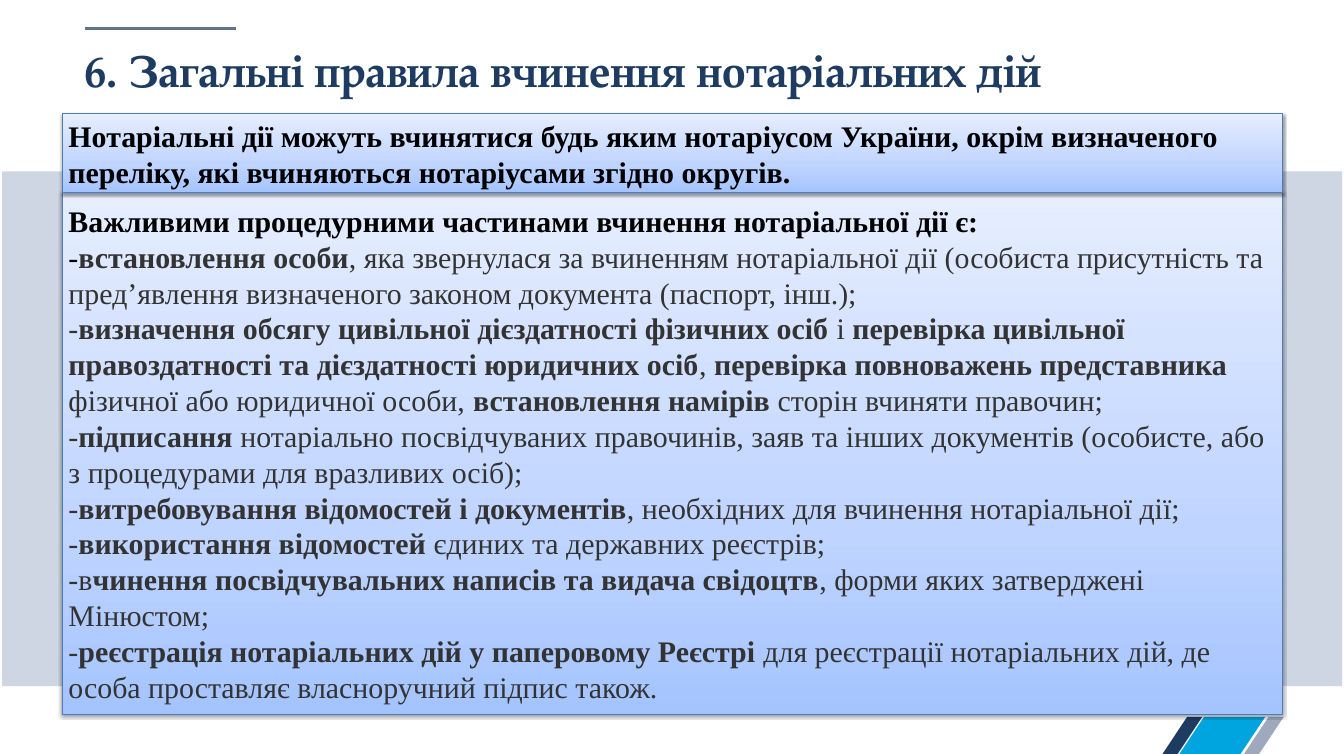
from copy import deepcopy

from lxml import etree
from pptx import Presentation
from pptx.dml.color import RGBColor
from pptx.enum import shapes, text
from pptx.oxml.ns import qn
from pptx.util import Cm, Pt

BLACK = RGBColor(0x00, 0x00, 0x00)
DARK_GREY = RGBColor(0x33, 0x33, 0x33)
NAVY = RGBColor(0x1E, 0x3C, 0x61)
SKY = RGBColor(0x00, 0xA4, 0xDF)
GREY_BLUE = RGBColor(0x9E, 0xA9, 0xBE)
SLATE = RGBColor(0x5F, 0x74, 0x88)
PALE = RGBColor(0xCE, 0xD6, 0xE3)
BORDER = RGBColor(0x4B, 0x7E, 0xBC)
GRADIENT = [
    (0, RGBColor(0xA4, 0xC4, 0xFF)),
    (0.35, RGBColor(0xBF, 0xD4, 0xFF)),
    (1, RGBColor(0xE6, 0xEE, 0xFF)),
]

TITLE = "6. Загальні правила вчинення нотаріальних дій"
RULE = (
    "**Нотаріальні дії можуть вчинятися будь яким нотаріусом України, окрім "
    "визначеного переліку, які вчиняються нотаріусами згідно округів.**"
)
HEADING = "**Важливими процедурними частинами вчинення нотаріальної дії є:**"
STEPS = [
    "-**встановлення особи**, яка звернулася за вчиненням нотаріальної дії (особиста "
    "присутність та пред’явлення визначеного законом документа (паспорт, інш.);",
    "-**визначення обсягу цивільної дієздатності фізичних осіб **і **перевірка цивільної "
    "правоздатності та дієздатності юридичних осіб**, **перевірка повноважень "
    "представника **фізичної або юридичної особи, **встановлення намірів **сторін "
    "вчиняти правочин;",
    "-**підписання **нотаріально посвідчуваних правочинів, заяв та інших документів "
    "(особисте, або з процедурами для вразливих осіб);",
    "-**витребовування відомостей і документів**, необхідних для вчинення нотаріальної дії;",
    "-**використання відомостей **єдиних та державних реєстрів;",
    "-в**чинення посвідчувальних написів та видача свідоцтв**, форми яких затверджені "
    "Мінюстом;",
    "-**реєстрація нотаріальних дій у паперовому Реєстрі **для реєстрації нотаріальних "
    "дій, де особа проставляє власноручний підпис також.",
]


def write_text(paragraph, content, *, font, size, color, lead_color=None, spacing=None):
    """Fill a paragraph; ** toggles bold, lead_color colours the first run."""
    paragraph.alignment = text.PP_ALIGN.LEFT
    if spacing:
        paragraph.line_spacing = Pt(spacing)
    for index, part in enumerate(content.split("**")):
        if not part:
            continue
        run = paragraph.add_run()
        run.text = part
        run.font.name = font
        run.font.size = Pt(size)
        run.font.bold = index % 2 == 1
        run.font.color.rgb = lead_color if lead_color and index == 0 else color


def paint(shape, color):
    shape.shadow.inherit = False
    shape.fill.solid()
    shape.fill.fore_color.rgb = color
    shape.line.fill.background()


def add_stripe(slide, left, width, color, top=27.1, bottom=28.5, slant=0.93):
    """Draw a slanted stripe whose lower left corner is at left."""
    builder = slide.shapes.build_freeform(Cm(left + slant), Cm(top))
    builder.add_line_segments([
        (Cm(left + slant + width), Cm(top)),
        (Cm(left + width), Cm(bottom)),
        (Cm(left), Cm(bottom)),
    ])
    paint(builder.convert_to_shape(), color)


def add_title_rule(slide):
    rule = slide.shapes.add_connector(
        shapes.MSO_CONNECTOR.STRAIGHT, Cm(3.2), Cm(1.09), Cm(8.92), Cm(1.09))
    rule.line.color.rgb = SLATE
    rule.line.width = Pt(3)
    etree.SubElement(rule._element.spPr, qn("a:effectLst"))


def add_title(slide):
    title = slide.shapes.title
    title.left, title.top, title.width, title.height = Cm(3.2), Cm(1.55), Cm(41.68), Cm(2.1)
    frame = title.text_frame
    frame.margin_left = frame.margin_right = frame.margin_bottom = 0
    frame.margin_top = Cm(0.05)
    frame.vertical_anchor = text.MSO_ANCHOR.TOP
    frame.auto_size = text.MSO_AUTO_SIZE.NONE
    paragraph = frame.paragraphs[0]
    paragraph.space_before = Pt(1.6)
    write_text(paragraph, f"**{TITLE}**", font="TeX Gyre Pagella", size=47.9, color=NAVY)


def fill_gradient(shape):
    shape.fill.gradient()
    shape.fill.gradient_angle = 90
    stop_list = shape._element.spPr.find(".//" + qn("a:gsLst"))
    stop_list.append(deepcopy(stop_list[0]))
    for stop, (position, color) in zip(shape.fill.gradient_stops, GRADIENT):
        stop.position = position
        stop.color.rgb = color


def add_soft_shadow(shape):
    shape.shadow.inherit = False
    effects = shape._element.spPr.find(qn("a:effectLst"))
    shadow = etree.SubElement(
        effects, qn("a:outerShdw"), blurRad=str(Pt(3.1)), dist=str(Pt(1.6)),
        dir="5400000", rotWithShape="0")
    color = etree.SubElement(shadow, qn("a:srgbClr"), val="000000")
    etree.SubElement(color, qn("a:alpha"), val="38000")


def add_panel(slide, top, height):
    """Add a gradient box and return its text frame."""
    panel = slide.shapes.add_shape(
        shapes.MSO_SHAPE.RECTANGLE, Cm(2.34), Cm(top), Cm(46.15), Cm(height))
    fill_gradient(panel)
    panel.line.color.rgb = BORDER
    panel.line.width = Pt(0.75)
    add_soft_shadow(panel)
    panel.text_frame.word_wrap = True
    panel.text_frame.vertical_anchor = text.MSO_ANCHOR.MIDDLE
    return panel.text_frame


def main():
    presentation = Presentation()
    presentation.slide_width, presentation.slide_height = Cm(50.8), Cm(28.5)
    slide = presentation.slides.add_slide(presentation.slide_layouts[5])

    for left, width, color in [(47.02, 0.57, GREY_BLUE), (44.58, 2.31, SKY), (43.94, 0.57, NAVY)]:
        add_stripe(slide, left, width, color)
    add_title_rule(slide)
    band = slide.shapes.add_shape(
        shapes.MSO_SHAPE.RECTANGLE, Cm(0.08), Cm(6.48), Cm(50.65), Cm(19.46))
    paint(band, PALE)
    add_title(slide)

    body = {"font": "Times New Roman", "size": 32, "spacing": 38.4}
    steps = add_panel(slide, 7.26, 19.76)
    write_text(steps.paragraphs[0], HEADING, color=BLACK, **body)
    for index, step in enumerate(STEPS):
        lead_color = BLACK if index == 0 else None
        write_text(steps.add_paragraph(), step, color=DARK_GREY, lead_color=lead_color, **body)
    rule = add_panel(slide, 4.29, 3)
    write_text(rule.paragraphs[0], RULE, color=BLACK, **body)

    presentation.save("out.pptx")


if __name__ == "__main__":
    main()
